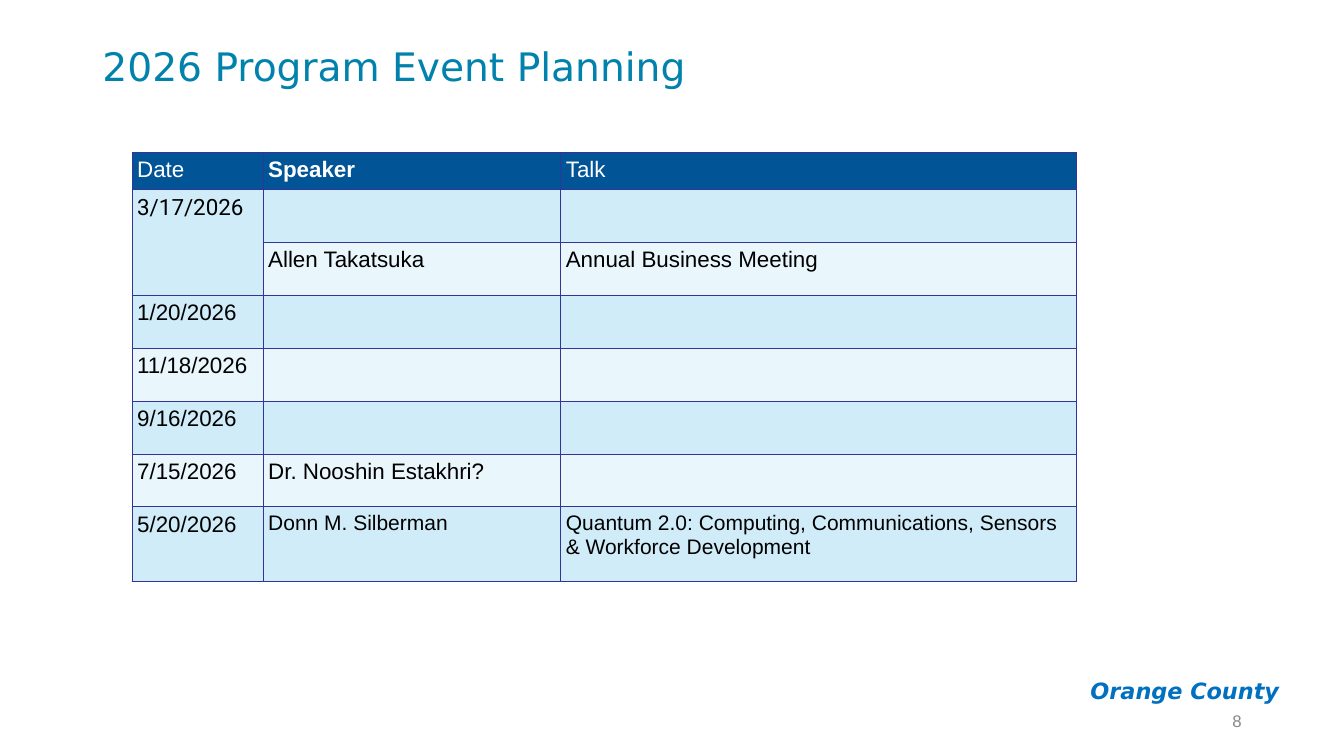
from pptx import Presentation
from pptx.dml.color import RGBColor
from pptx.enum.text import MSO_ANCHOR, MSO_AUTO_SIZE, PP_ALIGN
from pptx.oxml import parse_xml
from pptx.oxml.ns import nsdecls
from pptx.util import Pt

TEAL = RGBColor(0x01, 0x82, 0xAC)
BLUE = RGBColor(0x00, 0x70, 0xC0)
GRAY = RGBColor(0x88, 0x88, 0x88)
NAVY = RGBColor(0x01, 0x55, 0x96)
BAND_DARK = RGBColor(0xD1, 0xEC, 0xF9)
BAND_LIGHT = RGBColor(0xE9, 0xF6, 0xFC)
BORDER = RGBColor(0x33, 0x33, 0x99)
WHITE = RGBColor(0xFF, 0xFF, 0xFF)
BLACK = RGBColor(0x00, 0x00, 0x00)

ROWS = [
    ("Date", "Speaker", "Talk"),
    ("3/17/2026", "", ""),
    ("", "Allen Takatsuka", "Annual Business Meeting"),
    ("1/20/2026", "", ""),
    ("11/18/2026", "", ""),
    ("9/16/2026", "", ""),
    ("7/15/2026", "Dr. Nooshin Estakhri?", ""),
    ("5/20/2026", "Donn M. Silberman",
     "Quantum 2.0: Computing, Communications, Sensors & Workforce Development"),
]
COL_WIDTHS = [93.6, 212.6, 368]
ROW_HEIGHTS = [26.4] + [37.8] * 6 + [53]


def style_paragraph(p, font, size, color, bold=False):
    p.font.name = font
    p.font.size = Pt(size)
    p.font.color.rgb = color
    p.font.bold = bold


def add_borders(cell):
    """Line all four sides; call before the cell is filled."""
    for side in ("lnL", "lnR", "lnT", "lnB"):
        cell._tc.get_or_add_tcPr().append(parse_xml(
            f'<a:{side} {nsdecls("a")} w="{Pt(0.75)}"><a:solidFill>'
            f'<a:srgbClr val="{BORDER}"/></a:solidFill></a:{side}>'))


prs = Presentation()
prs.slide_width, prs.slide_height = Pt(960), Pt(540)
slide = prs.slides.add_slide(prs.slide_layouts[5])

# Title
title = slide.shapes.title
title.left, title.top, title.width, title.height = Pt(66), Pt(20.8), Pt(828), Pt(56.4)
tf = title.text_frame
tf.text = "2026 Program Event Planning"
tf.vertical_anchor = MSO_ANCHOR.MIDDLE
tf.auto_size = MSO_AUTO_SIZE.NONE
p = tf.paragraphs[0]
p.alignment = PP_ALIGN.LEFT
p.line_spacing = 0.9
style_paragraph(p, "DejaVu Sans", 28, TEAL)

# Schedule table
table = slide.shapes.add_table(len(ROWS), len(COL_WIDTHS), Pt(94.4), Pt(109),
                               Pt(sum(COL_WIDTHS)), Pt(sum(ROW_HEIGHTS))).table
for column, width in zip(table.columns, COL_WIDTHS):
    column.width = Pt(width)
for row, height in zip(table.rows, ROW_HEIGHTS):
    row.height = Pt(height)

for i, texts in enumerate(ROWS):
    for j, text in enumerate(texts):
        cell = table.cell(i, j)
        cell.margin_left = cell.margin_right = Pt(3.6)
        cell.margin_top = cell.margin_bottom = Pt(3.6)
        add_borders(cell)
        cell.fill.solid()
        cell.fill.fore_color.rgb = NAVY if i == 0 else BAND_DARK if i % 2 else BAND_LIGHT
        cell.text = text
        style_paragraph(cell.text_frame.paragraphs[0],
                        "Roboto" if text == "3/17/2026" else "Arial",
                        15 if i == len(ROWS) - 1 and j > 0 else 16,
                        WHITE if i == 0 else BLACK,
                        bold=text == "Speaker")
table.cell(1, 0).merge(table.cell(2, 0))

# Footer: chapter name and slide number
for text, box, margin, font, size, color, strong in [
    ("Orange County", (756.8, 476.6, 164, 34), 7.2, "DejaVu Sans", 16, BLUE, True),
    ("8", (678, 500.5, 216, 28.8), 3.6, "Arial", 12, GRAY, False),
]:
    tf = slide.shapes.add_textbox(*map(Pt, box)).text_frame
    tf.word_wrap = True
    tf.margin_top = tf.margin_bottom = Pt(margin)
    tf.vertical_anchor = MSO_ANCHOR.TOP if strong else MSO_ANCHOR.MIDDLE
    tf.text = text
    p = tf.paragraphs[0]
    p.alignment = PP_ALIGN.RIGHT
    style_paragraph(p, font, size, color, bold=strong)
    p.font.italic = strong

prs.save("out.pptx")
